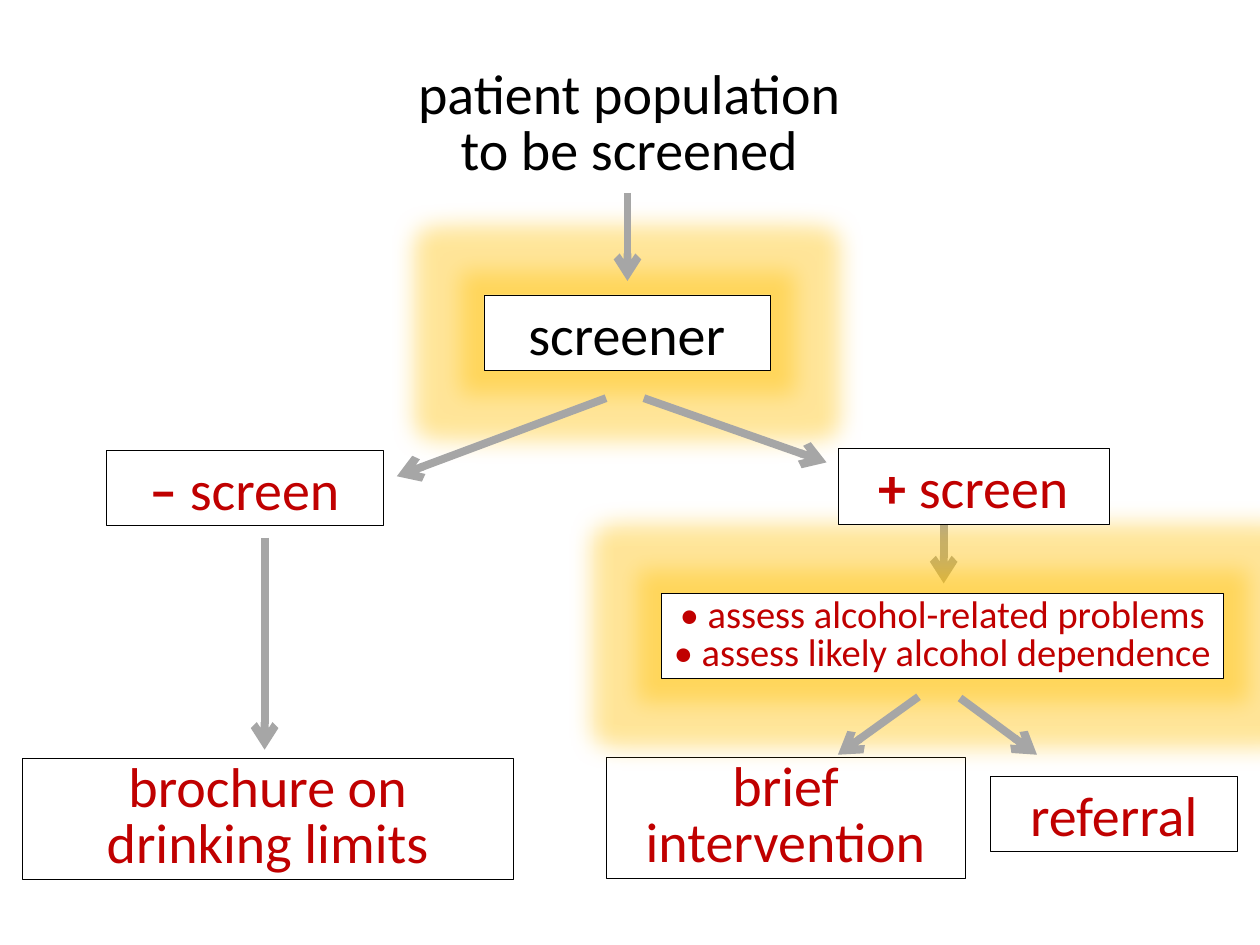
import dataclasses

import lxml.etree
import pptx
import pptx.dml.color
import pptx.enum.shapes
import pptx.enum.text
import pptx.oxml.ns
import pptx.util


@dataclasses.dataclass(frozen=True)
class Theme:
    font: str = "Calibri"
    ink: str = "000000"
    outcome: str = "C00000"
    paper: str = "FFFFFF"
    arrow: str = "A6A6A6"
    glow: str = "FFC000"
    large: int = 32
    small: int = 22
    outline: float = 0.25
    arrow_width: float = 4.5
    glow_radius: int = 27
    glow_opacity: int = 40


THEME = Theme()
CELL = 0.1  # inches: the page is a grid of 100 columns by 75 rows
COLUMNS, ROWS = 100, 75


def grid(*cells):
    return [pptx.util.Inches(cell * CELL) for cell in cells]


def rgb(value):
    return pptx.dml.color.RGBColor.from_string(value)


def add_xml(parent, tag, **attributes):
    child = lxml.etree.SubElement(parent, pptx.oxml.ns.qn(tag))
    for name, value in attributes.items():
        child.set(name, str(value))
    return child


def write(para, text, *, size=THEME.large, color=THEME.outcome, bold=False):
    """Add text to a paragraph, turning each newline into a line break."""
    for number, line in enumerate(text.split("\n")):
        if number:
            para.add_line_break()
        span = para.add_run()
        span.text = line
        span.font.name = THEME.font
        span.font.size = pptx.util.Pt(size)
        span.font.bold = bold
        span.font.color.rgb = rgb(color)


def add_glow(box):
    effects = box.element.spPr.find(pptx.oxml.ns.qn("a:effectLst"))
    glow = add_xml(effects, "a:glow", rad=int(pptx.util.Pt(THEME.glow_radius)))
    color = add_xml(glow, "a:srgbClr", val=THEME.glow)
    add_xml(color, "a:alpha", val=THEME.glow_opacity * 1000)


def add_box(page, place, *lines, sign="", tight=False, outlined=True,
            glowing=False, size=THEME.large, color=THEME.outcome):
    """Add a box with one paragraph a line; tight sets leading to type size."""
    box = page.shapes.add_shape(
        pptx.enum.shapes.MSO_SHAPE.RECTANGLE, *grid(*place))
    box.shadow.inherit = False
    box.fill.solid()
    box.fill.fore_color.rgb = rgb(THEME.paper)
    if outlined:
        box.line.color.rgb = rgb(THEME.ink)
        box.line.width = pptx.util.Pt(THEME.outline)
    else:
        box.line.fill.background()
    if glowing:
        add_glow(box)

    frame = box.text_frame
    frame.word_wrap = True
    frame.auto_size = pptx.enum.text.MSO_AUTO_SIZE.SHAPE_TO_FIT_TEXT
    frame.vertical_anchor = pptx.enum.text.MSO_ANCHOR.MIDDLE
    frame.margin_left = frame.margin_right = pptx.util.Inches(0.06)
    frame.margin_top = frame.margin_bottom = pptx.util.Inches(0.03)
    for number, line in enumerate(lines):
        para = frame.add_paragraph() if number else frame.paragraphs[0]
        para.alignment = pptx.enum.text.PP_ALIGN.CENTER
        if tight:
            para.line_spacing = pptx.util.Pt(size)
        if sign:
            write(para, sign, size=size, color=color, bold=True)
        write(para, line, size=size, color=color)


def add_arrow(page, start, end):
    arrow = page.shapes.add_connector(
        pptx.enum.shapes.MSO_CONNECTOR.STRAIGHT, *grid(*start, *end))
    arrow.line.color.rgb = rgb(THEME.arrow)
    arrow.line.width = pptx.util.Pt(THEME.arrow_width)
    properties = arrow.element.spPr
    outline = properties.find(pptx.oxml.ns.qn("a:ln"))
    add_xml(outline, "a:tailEnd", type="arrow")
    add_xml(properties, "a:effectLst")


def add_outcomes(page):
    add_arrow(page, (74.9, 41.4), (74.9, 46.3))
    add_box(page, (1.8, 60.2, 38.9, 9.6), "brochure on\ndrinking limits",
            tight=True)
    add_arrow(page, (21, 42.7), (21, 59.5))
    add_box(page, (48.1, 60.1, 28.5, 9.6), "brief intervention", tight=True)
    add_box(page, (78.6, 61.6, 19.6, 6), "referral")
    add_box(page, (52.5, 47.1, 44.6, 6.7),
            "• assess alcohol-related problems",
            "• assess likely alcohol dependence",
            size=THEME.small, tight=True, glowing=True)
    add_arrow(page, (72.9, 55.3), (66.5, 59.9))
    add_arrow(page, (76.2, 55.4), (82.3, 59.9))


def add_screening(page):
    add_box(page, (30.2, 5.2, 39.5, 9.6), "patient population\nto be screened",
            color=THEME.ink, tight=True, outlined=False)
    add_box(page, (38.4, 23.4, 22.7, 6), "screener", color=THEME.ink,
            glowing=True)
    add_box(page, (8.4, 35.7, 22, 6), "screen", sign="– ")
    add_box(page, (66.5, 35.6, 21.5, 6), " screen", sign="+")
    add_arrow(page, (49.8, 15.3), (49.8, 22.3))
    add_arrow(page, (48.1, 31.6), (31.5, 37.8))
    add_arrow(page, (51.1, 31.6), (65.6, 36.7))


def main():
    deck = pptx.Presentation()
    deck.slide_width, deck.slide_height = grid(COLUMNS, ROWS)
    page = deck.slides.add_slide(deck.slide_layouts[6])
    add_outcomes(page)
    add_screening(page)
    deck.save("out.pptx")


if __name__ == "__main__":
    main()
